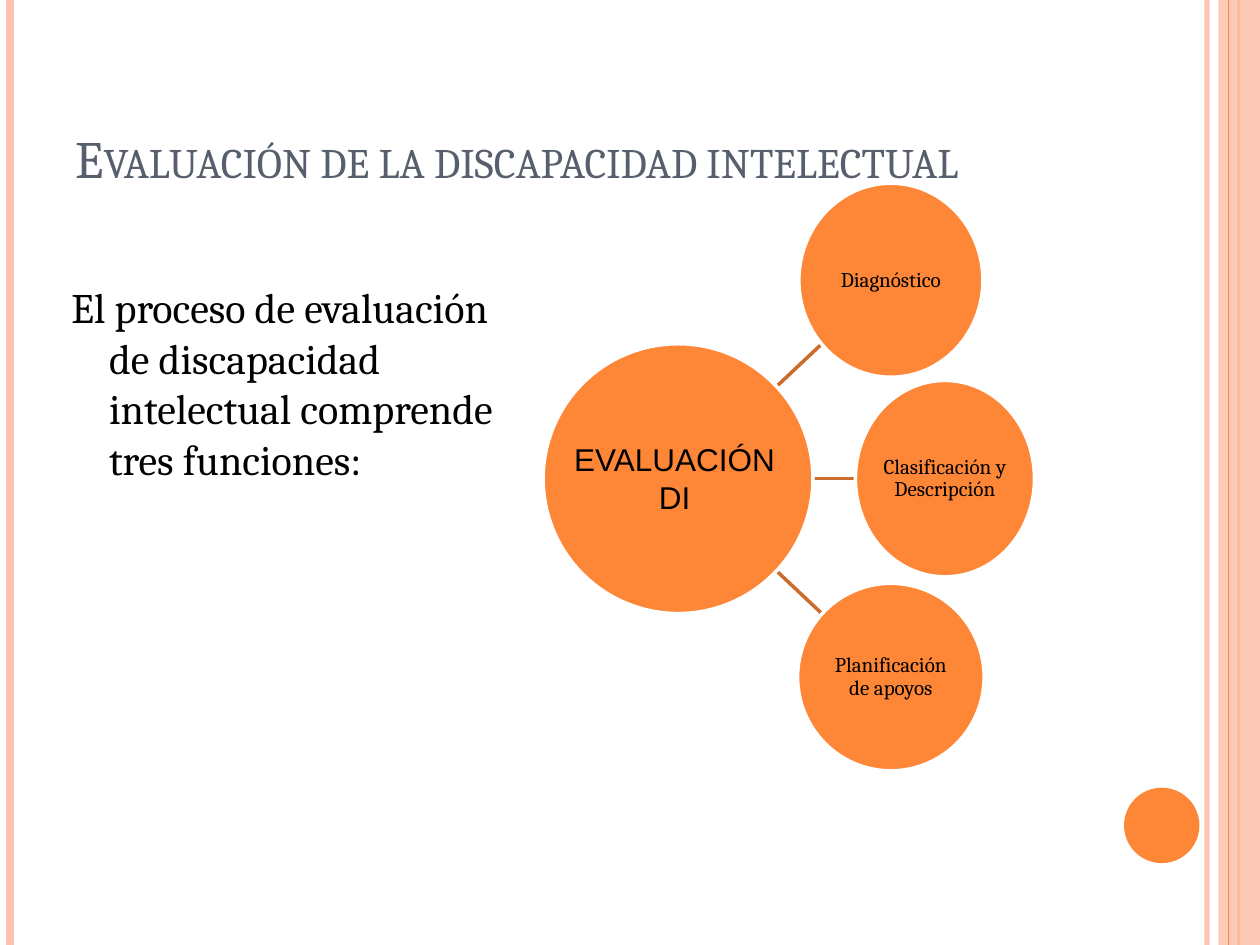
"""Build the slide on the evaluation of intellectual disability."""
from lxml import etree
from pptx import Presentation
from pptx import util as u
from pptx.dml.color import RGBColor
from pptx.enum import shapes, text
from pptx.oxml import ns

TITLE = "Evaluación de la discapacidad intelectual"
BODY = "El proceso de evaluación de discapacidad intelectual comprende tres funciones:"
HUB = ["EVALUACIÓN", "DI"]
FUNCTIONS = [
    ("Diagnóstico", 17.96, 3.71, 3.91),
    ("Clasificación y Descripción", 19.05, 3.61, 3.96),
    ("Planificación de apoyos", 17.96, 3.76, 3.78),
]
SPOKES = [(-1.78, 16.59, -2.74), (0, 17.25, 0), (1.78, 16.59, 2.74)]
HUB_X, HUB_Y, HUB_SIZE, ROW_STEP, SPOKE_X = 13.67, 9.65, 5.44, 4, 15.57
WIDTH, HEIGHT = 25.4, 19.05
ORANGE, PEACH, RUST, SLATE = "FE8637", "FEC3AE", "CB6B2C", "575F6D"
WHITE, BLACK = "FFFFFF", "000000"
RULES = [(24.33, PEACH, 3, 93), (0.21, PEACH, 4.5, 100), (24.97, ORANGE, 1.5, 100)]
THIN_RULE = (24.77, ORANGE, 0.75, 100)


def rgb(value):
    return RGBColor.from_string(value)


def set_alpha(s, percent):
    clr = s._element.spPr.find(".//" + ns.qn("a:srgbClr"))
    etree.SubElement(clr, ns.qn("a:alpha"), val=str(percent * 1000))


def add_line(tree, x1, y1, x2, y2, color, width, alpha=100):
    s = tree.add_connector(shapes.MSO_CONNECTOR.STRAIGHT, *map(u.Cm, (x1, y1, x2, y2)))
    s.line.color.rgb = rgb(color)
    s.line.width = u.Pt(width)
    if alpha < 100:
        set_alpha(s, alpha)
    etree.SubElement(s._element.spPr, ns.qn("a:effectLst"))


def add_rule(tree, x, color, width, alpha):
    add_line(tree, x, 0, x, HEIGHT, color, width, alpha)


def add_shape(tree, kind, x, y, w, h, color, outline=None):
    s = tree.add_shape(kind, *map(u.Cm, (x, y, w, h)))
    s.shadow.inherit = False
    s.fill.solid()
    s.fill.fore_color.rgb = rgb(color)
    if outline:
        s.line.color.rgb = rgb(outline)
        s.line.width = u.Pt(2)
    else:
        s.line.fill.background()
    return s


def add_circle(tree, cx, cy, w, h, outline=None):
    kind = shapes.MSO_SHAPE.OVAL
    return add_shape(tree, kind, cx - w / 2, cy - h / 2, w, h, ORANGE, outline)


def write(s, lines, size, font, color, align, anchor, wrap=True):
    tf = s.text_frame
    tf.word_wrap = wrap
    tf.vertical_anchor = anchor
    for i, line in enumerate(lines):
        p = tf.paragraphs[0] if i == 0 else tf.add_paragraph()
        p.alignment = align
        r = p.add_run()
        r.text = line
        r.font.size = u.Pt(size)
        r.font.name = font
        r.font.color.rgb = rgb(color)
    return tf


def add_text(tree, x, y, w, h, *style, **options):
    return write(tree.add_textbox(*map(u.Cm, (x, y, w, h))), *style, **options)


def main():
    prs = Presentation()
    prs.slide_width, prs.slide_height = u.Cm(WIDTH), u.Cm(HEIGHT)
    tree = prs.slides.add_slide(prs.slide_layouts[6]).shapes
    left, center = text.PP_ALIGN.LEFT, text.PP_ALIGN.CENTER
    top, middle, bottom = (text.MSO_ANCHOR.TOP, text.MSO_ANCHOR.MIDDLE,
                           text.MSO_ANCHOR.BOTTOM)

    for rule in RULES:
        add_rule(tree, *rule)
    band = add_shape(tree, shapes.MSO_SHAPE.RECTANGLE, 24.56, 0, 0.84, HEIGHT, PEACH)
    set_alpha(band, 87)
    add_rule(tree, *THIN_RULE)
    add_circle(tree, 23.42, 16.64, 1.52, 1.52)

    tf = add_text(tree, 1.27, 0.76, 20.75, 3.18, [TITLE], 30, "Cambria", SLATE, left, bottom)
    tf.paragraphs[0].runs[0].font._element.set("cap", "small")

    tf = add_text(tree, 1.19, 5.56, 9.12, 12.42, [BODY], 24, "Cambria", BLACK, left, top)
    p = tf.paragraphs[0]
    p.space_before = u.Pt(6)
    pPr = p._p.get_or_add_pPr()
    pPr.set("marL", str(u.Cm(0.76)))
    pPr.set("indent", str(-u.Cm(0.76)))

    for dy1, x2, dy2 in SPOKES:
        add_line(tree, SPOKE_X, HUB_Y + dy1, x2, HUB_Y + dy2, RUST, 2)
    add_circle(tree, HUB_X, HUB_Y, HUB_SIZE, HUB_SIZE, WHITE)
    for i, (label, cx, w, h) in enumerate(FUNCTIONS):
        s = add_circle(tree, cx, HUB_Y + (i - 1) * ROW_STEP, w, h, WHITE)
        tf = write(s, [label], 12, "Cambria", BLACK, center, middle)
        tf.margin_left = tf.margin_right = tf.margin_top = tf.margin_bottom = u.Cm(0.02)
        tf.paragraphs[0].line_spacing = 0.9
    add_text(tree, 11.3, 8.74, 4.6, 1.8, HUB, 18, "Arial", BLACK, center, top, wrap=False)

    prs.save("out.pptx")


if __name__ == "__main__":
    main()
